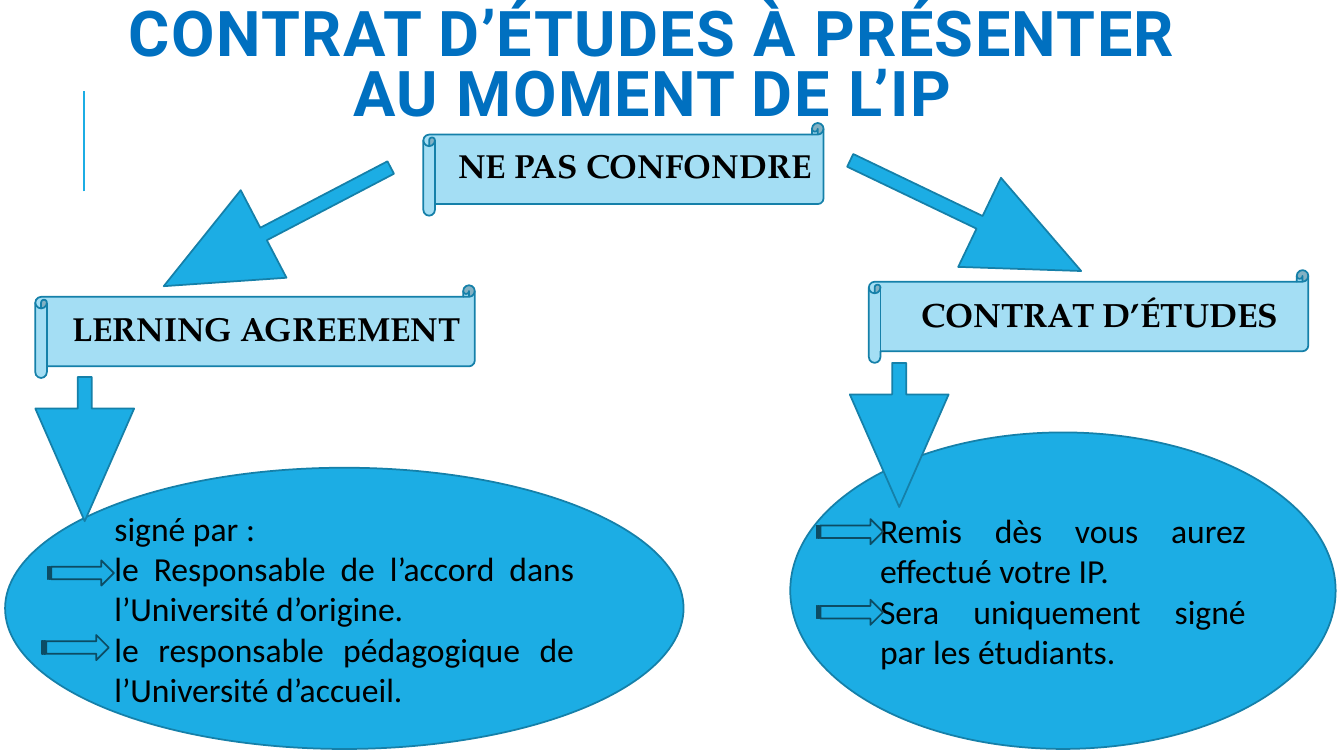
from lxml.etree import SubElement
from pptx import Presentation
from pptx.dml.color import RGBColor
from pptx.enum.shapes import MSO_CONNECTOR, MSO_SHAPE as SHAPE
from pptx.enum.text import MSO_ANCHOR as ANCHOR, PP_ALIGN as ALIGN
from pptx.oxml.ns import qn
from pptx.util import Inches, Pt

BLUE = RGBColor(0x1C, 0xAD, 0xE4)
PALE = RGBColor(0xA4, 0xDE, 0xF4)
EDGE = RGBColor(0x15, 0x80, 0xA9)
DARK = RGBColor(0x0C, 0x4C, 0x64)
HEADING = RGBColor(0x00, 0x70, 0xC0)
BLACK = RGBColor(0, 0, 0)

deck = Presentation()
deck.slide_width, deck.slide_height = Inches(13.33), Inches(7.5)
slide = deck.slides.add_slide(deck.slide_layouts[6])
COL, ROW = deck.slide_width / 100, deck.slide_height / 100


def box(left, top, width, height):
    return int(left * COL), int(top * ROW), int(width * COL), int(height * ROW)


def draw(kind, area, fill=BLUE, edge=EDGE):
    shape = slide.shapes.add_shape(kind, *box(*area))
    shape.shadow.inherit = False
    shape.fill.solid()
    shape.fill.fore_color.rgb = fill
    shape.line.color.rgb = edge
    shape.line.width = Pt(1.25)
    return shape


rule = slide.shapes.add_connector(
    MSO_CONNECTOR.STRAIGHT, int(6.22 * COL), int(25.33 * ROW), int(6.22 * COL), int(12 * ROW))
rule.line.color.rgb = BLUE
rule.line.width = Pt(1.5)
SubElement(rule._element.spPr, qn("a:effectLst"))

title = slide.shapes.add_textbox(*box(8.7, -1.87, 79.73, 21.87)).text_frame
title.word_wrap = True
title.vertical_anchor = ANCHOR.MIDDLE
heading = title.paragraphs[0]
heading.alignment = ALIGN.CENTER
heading.line_spacing = 0.8
heading_run = heading.add_run()
heading_run.text = "CONTRAT D’ÉTUDES À PRÉSENTER AU MOMENT DE L’IP"
heading_run.font.name = "Roboto"
heading_run.font.size = Pt(45)
heading_run.font.bold = True
heading_run.font.color.rgb = HEADING
heading_run.font._element.set("spc", "100")

scrolls = [
    ("NE PAS CONFONDRE", 31.5, 16.27, 29.78, 0.8, 23.8),
    ("LERNING AGREEMENT", 2.63, 37.73, 32.7, 0.8, 23.8),
    ("CONTRAT D’ÉTUDES", 64.65, 35.73, 32.7, 0.9, 24),
]
for label, left, top, width, spacing, size in scrolls:
    frame = draw(SHAPE.HORIZONTAL_SCROLL, (left, top, width, 12.27), PALE).text_frame
    frame.word_wrap = True
    frame.vertical_anchor = ANCHOR.MIDDLE
    frame.margin_left = frame.margin_right = Inches(0.05)
    frame.margin_top = frame.margin_bottom = Inches(0.05)
    line = frame.paragraphs[0]
    line.text = label
    line.alignment = ALIGN.CENTER
    line.line_spacing = spacing
    line.space_before, line.space_after = Pt(12), Pt(2)
    line.font.name = "TeX Gyre Pagella"
    line.font.size = Pt(size)
    line.font.bold = True
    line.font.color.rgb = BLACK
    props = line._p.get_or_add_pPr()
    props.set("marL", str(Inches(0.1)))
    props.set("indent", str(-Inches(0.1)))
    bullet = props.makeelement(qn("a:buChar"), {"char": " "})
    props.find(qn("a:defRPr")).addprevious(bullet)

ellipses = [
    ((0.38, 61.87, 50.48, 37.2), [
        "signé par :",
        "le Responsable de l’accord dans l’Université d’origine.",
        "le responsable pédagogique de l’Université d’accueil.",
    ]),
    ((58.8, 57.2, 40.58, 41.87), [
        "Remis dès vous aurez effectué votre IP.",
        "Sera uniquement signé par les étudiants.",
    ]),
]
for area, sentences in ellipses:
    frame = draw(SHAPE.OVAL, area).text_frame
    frame.word_wrap = True
    frame.vertical_anchor = ANCHOR.MIDDLE
    frame.text = "\n".join(sentences)
    for line in frame.paragraphs:
        line.alignment = ALIGN.JUSTIFY
        line.font.name = "Calibri"
        line.font.size = Pt(24)
        line.font.color.rgb = BLACK

arrows = [
    (16.95, 13.07, 33.87, 62.4),
    (68.18, 11.6, 33.87, 295.6),
    (2.63, 49.87, 19.07, 0),
    (63.23, 48, 19.07, 0),
]
for left, top, height, angle in arrows:
    arrow = draw(SHAPE.DOWN_ARROW, (left, top, 7.35, height))
    arrow.adjustments[0], arrow.adjustments[1] = 0.142, 1.14
    arrow.rotation = angle

for left, top in [(3.53, 74.13), (3.15, 84), (60.75, 68.67), (60.75, 79.33)]:
    draw(SHAPE.STRIPED_RIGHT_ARROW, (left, top, 4.95, 3.33), BLUE, DARK)

deck.save("out.pptx")
